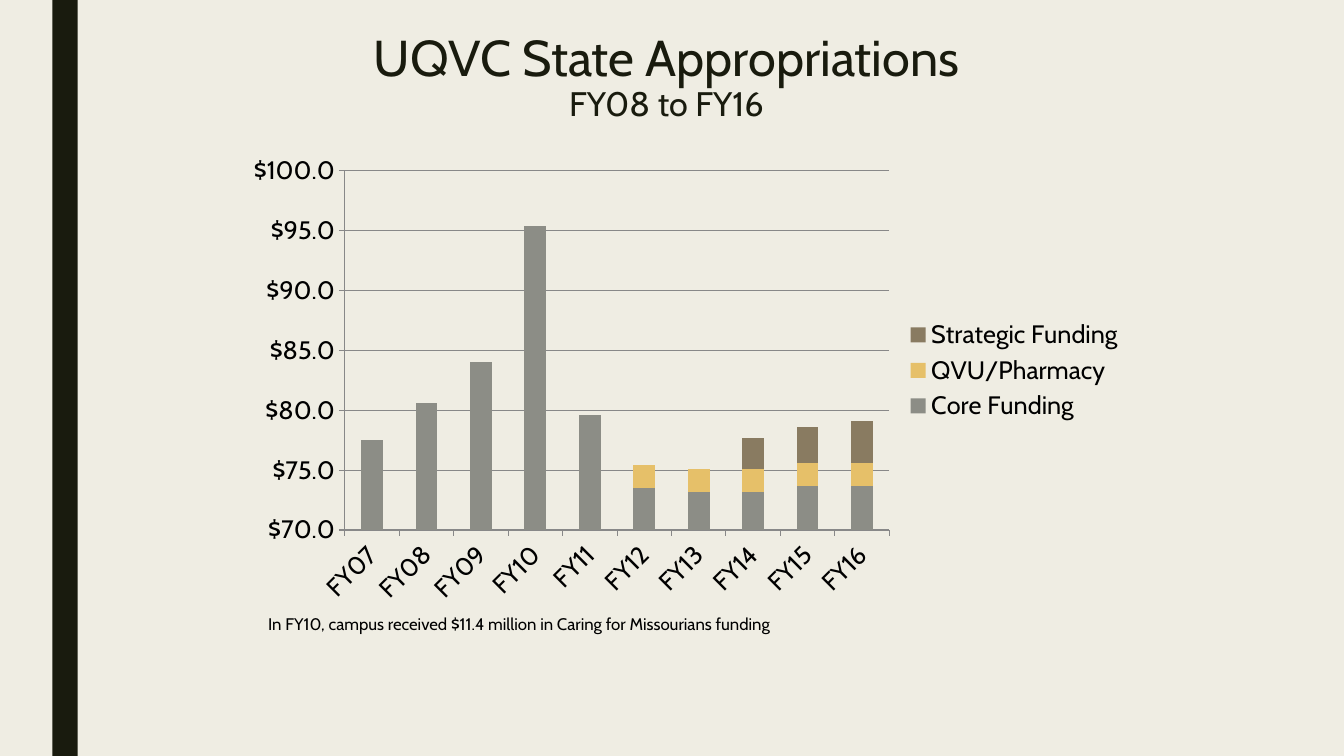
from lxml import etree
from pptx import Presentation, util as u
from pptx.chart.data import CategoryChartData
from pptx.dml.color import RGBColor
from pptx.enum import chart as ch, shapes, text
from pptx.oxml.ns import qn

CREAM = RGBColor(0xEF, 0xED, 0xE3)
DARK = RGBColor(0x19, 0x1B, 0x0E)
BLACK = RGBColor(0, 0, 0)
GREY = RGBColor(0x88, 0x88, 0x88)
STONE = RGBColor(0x8C, 0x8D, 0x86)
GOLD = RGBColor(0xE6, 0xC0, 0x69)
BROWN = RGBColor(0x89, 0x7B, 0x61)

YEARS = [f"FY{year:02d}" for year in range(7, 17)]
FUNDING = [
    ("Core Funding", [77.5, 80.6, 84, 95.4, 79.6, 73.5, 73.2, 73.2, 73.7, 73.7], STONE),
    ("QVU/Pharmacy", [0] * 5 + [1.9] * 5, GOLD),
    ("Strategic Funding", [0] * 7 + [2.6, 3, 3.5], BROWN),
]


class SlideBuilder:
    """Hold the style and the current slide, and add elements to it."""

    font = "Cabin"

    def __init__(self, prs):
        self.s = prs.slides.add_slide(prs.slide_layouts[5])
        fill = self.s.background.fill
        fill.solid()
        fill.fore_color.rgb = CREAM

    def style(self, font, size, color):
        font.name, font.size, font.bold = self.font, u.Pt(size), False
        font.color.rgb = color

    def run(self, p, words, size, color):
        r = p.add_run()
        r.text = words
        self.style(r.font, size, color)

    def place(self, sp, box):
        sp.left, sp.top, sp.width, sp.height = map(u.Inches, box)

    def bar(self, box, color):
        sp = self.s.shapes.add_shape(
            shapes.MSO_SHAPE.RECTANGLE, *map(u.Inches, box))
        sp.shadow.inherit = False
        sp.fill.solid()
        sp.fill.fore_color.rgb = color
        sp.line.fill.background()

    def title(self, box, heading, subheading):
        sp = self.s.shapes.title
        self.place(sp, box)
        tf = sp.text_frame
        tf.word_wrap = True
        tf.auto_size = text.MSO_AUTO_SIZE.NONE
        tf.vertical_anchor = text.MSO_ANCHOR.TOP
        p = tf.paragraphs[0]
        p.alignment = text.PP_ALIGN.CENTER
        p.line_spacing = 0.89
        self.run(p, heading, 36, DARK)
        p.add_line_break()
        self.run(p, subheading, 24.3, DARK)

    def note(self, box, words):
        tf = self.s.shapes.add_textbox(*map(u.Inches, box)).text_frame
        tf.word_wrap = True
        self.run(tf.paragraphs[0], words, 12, BLACK)

    def line(self, line):
        line.color.rgb = GREY
        line.width = u.Pt(0.75)

    def chart(self, box, plot_box):
        data = CategoryChartData()
        data.categories = YEARS
        for name, values, _ in FUNDING:
            data.add_series(name, values)
        chart = self.s.shapes.add_chart(
            ch.XL_CHART_TYPE.COLUMN_STACKED, *map(u.Inches, box), data).chart
        chart.has_title = False
        self.style(chart.font, 18, BLACK)

        plot = chart.plots[0]
        plot.gap_width, plot.overlap = 150, 100
        plot.vary_by_categories = False
        for series, (_, _, color) in zip(plot.series, FUNDING):
            series.format.fill.solid()
            series.format.fill.fore_color.rgb = color

        years, dollars = chart.category_axis, chart.value_axis
        for axis in (years, dollars):
            axis.major_tick_mark = ch.XL_TICK_MARK.OUTSIDE
            axis.minor_tick_mark = ch.XL_TICK_MARK.NONE
            self.style(axis.tick_labels.font, 18, BLACK)
            self.line(axis.format.line)
        dollars.minimum_scale, dollars.maximum_scale = 70, 100
        dollars.major_unit = 5
        dollars.tick_labels.number_format = '"$"#,##0.0'
        dollars.tick_labels.number_format_is_linked = False
        dollars.has_major_gridlines = True
        self.line(dollars.major_gridlines.format.line)

        chart.has_legend = True
        chart.legend.position = ch.XL_LEGEND_POSITION.RIGHT
        chart.legend.include_in_layout = False
        self.style(chart.legend.font, 18, BLACK)

        body = chart.element.xpath(".//c:catAx/c:txPr/a:bodyPr")[0]
        body.set("rot", str(-45 * 60000))
        body.set("vert", "horz")
        self.fix_plot(chart.element.xpath(".//c:plotArea")[0], plot_box)

    def fix_plot(self, area, plot_box):
        for old in area.findall(qn("c:layout")):
            area.remove(old)
        layout = etree.Element(qn("c:layout"))
        area.insert(0, layout)
        manual = etree.SubElement(layout, qn("c:manualLayout"))
        settings = [("layoutTarget", "inner"), ("xMode", "edge"), ("yMode", "edge")]
        settings += zip("xywh", plot_box)
        for tag, value in settings:
            etree.SubElement(manual, qn(f"c:{tag}")).set("val", str(value))


def main():
    prs = Presentation()
    prs.slide_width, prs.slide_height = u.Inches(13.33), u.Inches(7.5)
    slide = SlideBuilder(prs)
    slide.bar((0.52, 0, 0.25, 7.5), DARK)
    slide.title((2.11, 0.28, 9, 1.03), "UQVC State Appropriations", "FY08 to FY16")
    slide.chart((2.25, 1.2, 9, 4.95), (0.13, 0.1, 0.6, 0.72))
    slide.note((2.56, 6.04, 8.39, 0.5),
               "In FY10, campus received $11.4 million in Caring for Missourians funding")
    prs.save("out.pptx")


if __name__ == "__main__":
    main()
